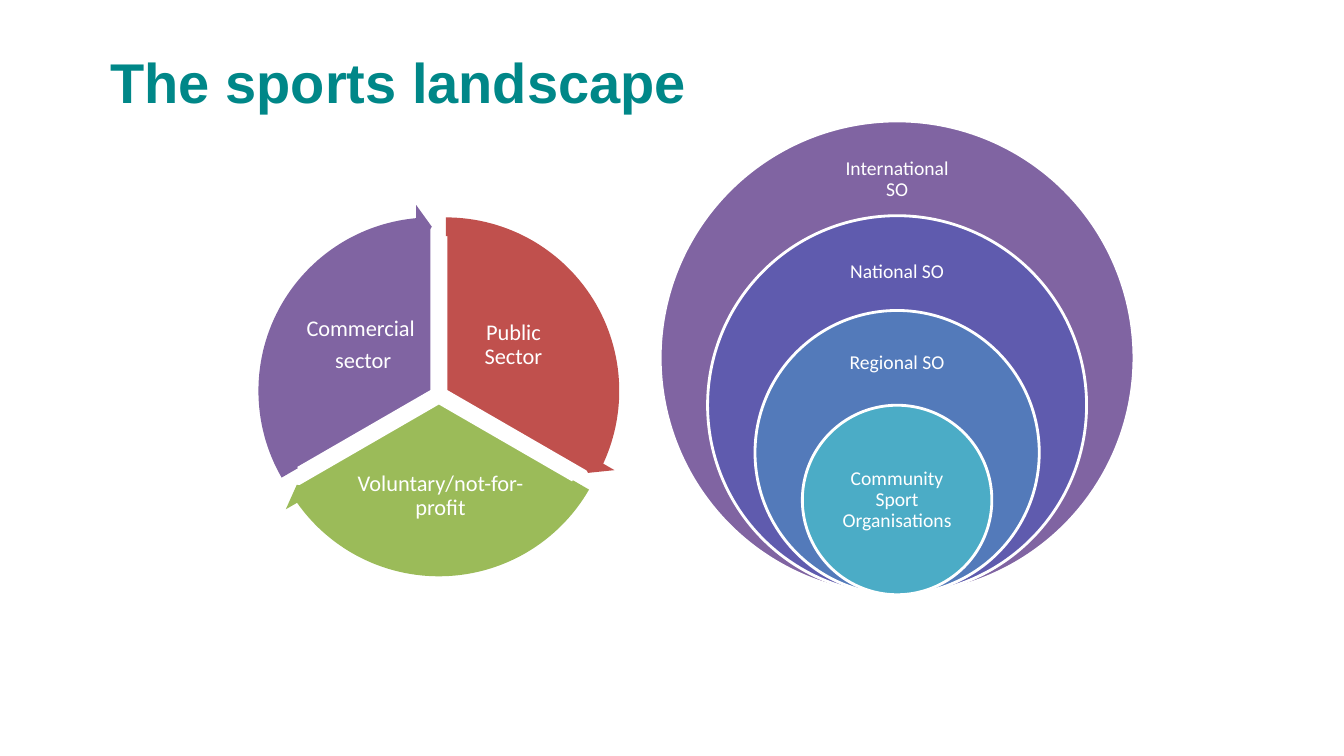
from pptx import Presentation
from pptx.dml.color import RGBColor
from pptx.enum.shapes import MSO_SHAPE
from pptx.enum.text import MSO_ANCHOR, PP_ALIGN
from pptx.util import Pt

PIE = MSO_SHAPE.PIE
ARROW = MSO_SHAPE.CIRCULAR_ARROW
OVAL = MSO_SHAPE.OVAL
MIDDLE = MSO_ANCHOR.MIDDLE
CENTER = PP_ALIGN.CENTER
LEFT = PP_ALIGN.LEFT

COLORS = {
    "white": "FFFFFF",
    "teal": "008788",
    "red": "C0504D",
    "green": "9BBB59",
    "purple": "8064A2",
    "indigo": "5F5BAE",
    "blue": "537ABA",
    "aqua": "4BACC6",
}


class Landscape:
    label_font = "Calibri"
    title_font = "Arial"
    outline = 2

    def __init__(self, slide):
        self.slide = slide
        self.shapes = slide.shapes

    def start_group(self):
        self.shapes = self.slide.shapes.add_group_shape().shapes

    def color(self, name):
        return RGBColor.from_string(COLORS[name])

    def disc(self, kind, center_x, center_y, size, fill, adjustments=(), outlined=True):
        corner = Pt(center_x - size / 2), Pt(center_y - size / 2)
        disc = self.shapes.add_shape(kind, *corner, Pt(size), Pt(size))
        disc.shadow.inherit = False
        disc.fill.solid()
        disc.fill.fore_color.rgb = self.color(fill)
        if outlined:
            disc.line.color.rgb = self.color("white")
            disc.line.width = Pt(self.outline)
        else:
            disc.line.fill.background()
        for index, value in enumerate(adjustments):
            disc.adjustments[index] = value

    def text(self, lines, box, inset, frame_format, paragraph_format, font_format, color):
        frame = self.shapes.add_textbox(*map(Pt, box)).text_frame
        margins = {f"margin_{side}": Pt(inset) for side in ("left", "top", "right", "bottom")}
        for name, value in {**margins, **frame_format}.items():
            setattr(frame, name, value)
        frame.text = "\n".join(lines)
        for paragraph in frame.paragraphs:
            for name, value in paragraph_format.items():
                setattr(paragraph, name, value)
            font = paragraph.runs[0].font
            for name, value in font_format.items():
                setattr(font, name, value)
            font.color.rgb = self.color(color)

    def title(self, wording, box):
        self.text(
            [wording], box, 7.2,
            {"word_wrap": True, "vertical_anchor": MIDDLE},
            {"alignment": LEFT},
            {"name": self.title_font, "size": Pt(40), "bold": True},
            "teal",
        )

    def label(self, lines, box, size, inset):
        self.text(
            lines, box, inset,
            {"word_wrap": True, "vertical_anchor": MIDDLE},
            {"alignment": CENTER, "line_spacing": 0.9, "space_after": Pt(size * 0.35)},
            {"name": self.label_font, "size": Pt(size)},
            "white",
        )


def main():
    deck = Presentation()
    deck.slide_width, deck.slide_height = Pt(960), Pt(540)
    landscape = Landscape(deck.slides.add_slide(deck.slide_layouts[6]))
    landscape.title("The sports landscape", (72, 20.9, 869, 73.4))

    sectors = [
        (["Public Sector"], "red", (318.5, 279.2), (162, 18), (324.7, 211, 84.2, 70.6)),
        (["Voluntary/not-for-profit"], "green", (313.5, 287.8), (18, 90), (251.3, 323.3, 126.7, 61.9)),
        (["Commercial ", "sector"], "purple", (308.5, 279.2), (90, 162), (217.4, 211, 84.2, 70.6)),
    ]
    head_angle = 3.28
    landscape.start_group()
    for lines, fill, center, angles, box in sectors:
        landscape.disc(PIE, *center, 236.9, fill, angles)
        landscape.label(lines, box, 16, 1.44)
    for lines, fill, center, (start, end), box in sectors:
        bend = (0.05, head_angle, end - head_angle, start, 0.06)
        landscape.disc(ARROW, *center, 266.4, fill, bend, outlined=False)

    levels = [
        ("International SO", "purple", 103, 50.4, 94.3),
        ("National SO", "indigo", 169.9, 49, 94.3),
        ("Regional SO", "blue", 236.9, 45.4, 94.3),
        ("Community Sport Organisations", "aqua", 323.3, 67.7, 95.8),
    ]
    center_x, bottom, outer = 640.8, 424.8, 338.4
    landscape.start_group()
    for index, (wording, fill, top, height, width) in enumerate(levels):
        size = outer * (1 - index / 5)
        landscape.disc(OVAL, center_x, bottom - size / 2, size, fill)
        landscape.label([wording], (center_x - width / 2, top, width, height), 14, 7.9)

    deck.save("out.pptx")


if __name__ == "__main__":
    main()
